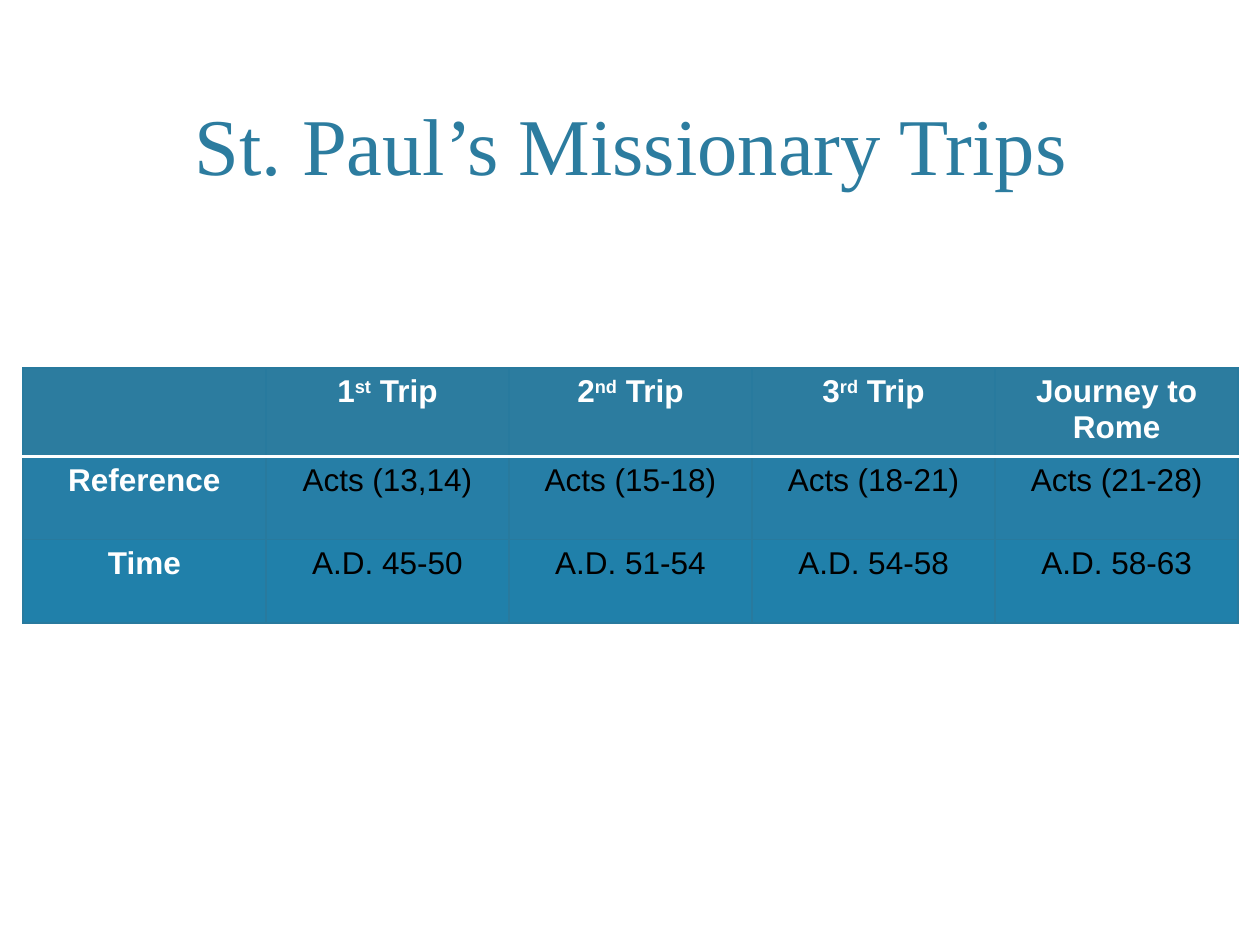
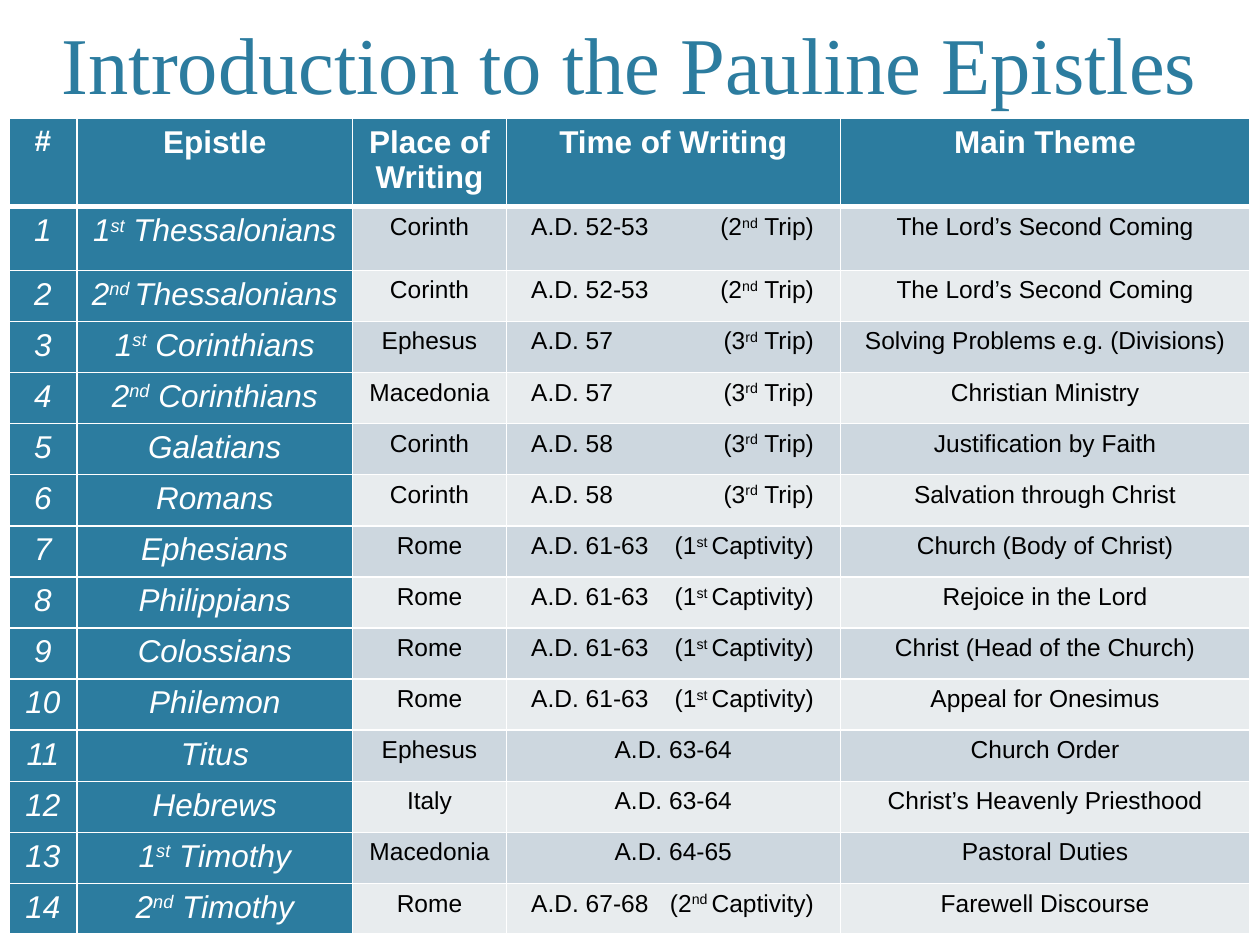
from dataclasses import dataclass, field
from itertools import product

from lxml.etree import SubElement
from pptx import Presentation
from pptx.dml.color import RGBColor
from pptx.enum.text import MSO_ANCHOR, PP_ALIGN
from pptx.oxml.ns import qn
from pptx.slide import Slide
from pptx.table import Table, _Cell
from pptx.text.text import _Paragraph
from pptx.util import Cm, Pt


@dataclass(frozen=True)
class Theme:
    teal: str = "2C7C9F"
    teal_mid: str = "267EA6"
    teal_deep: str = "2080AA"
    teal_line: str = "287A9E"
    band_dark: str = "CDD7DF"
    band_light: str = "E8ECEE"
    white: str = "FFFFFF"
    black: str = "000000"
    title_font: str = "Times New Roman"
    body_font: str = "Arial"
    title_size: float = 46
    large: float = 18
    number_sign: float = 17
    small: float = 14
    plain_table: str = "{2D5ABB26-0587-4C30-8999-92F81FD0307C}"


THEME = Theme()


@dataclass(frozen=True)
class TextStyle:
    size: float
    color: str
    font: str = THEME.body_font
    bold: bool = False
    italic: bool = False


@dataclass(frozen=True)
class Frame:
    left: float
    top: float
    width: float
    height: float


@dataclass(frozen=True)
class Grid:
    left: float
    top: float
    columns: list[float]
    rows: list[float]
    line_color: str
    header_line: float
    texts: list[tuple[str, ...]] = field(default_factory=list)


TITLE = TextStyle(THEME.title_size, THEME.teal, THEME.title_font)
HEADER = TextStyle(THEME.large, THEME.white, bold=True)
NUMBER_SIGN = TextStyle(THEME.number_sign, THEME.white, bold=True)
TRIP_DETAIL = TextStyle(THEME.large, THEME.black)
EPISTLE = TextStyle(THEME.large, THEME.white, italic=True)
EPISTLE_DETAIL = TextStyle(THEME.small, THEME.black)

TRIPS = Grid(0.46, 7.42, [4.9] * 5, [1.68] * 3, THEME.teal_line, 2, [
    ("", "1^st^ Trip", "2^nd^ Trip", "3^rd^ Trip", "Journey to Rome"),
    ("Reference", "Acts (13,14)", "Acts (15-18)", "Acts (18-21)", "Acts (21-28)"),
    ("Time", "A.D. 45-50", "A.D. 51-54", "A.D. 54-58", "A.D. 58-63"),
])

SECOND_TRIP = "\t(2^nd^ Trip)"
THIRD_TRIP = "\t(3^rd^ Trip)"
FIRST_CAPTIVITY = "A.D. 61-63\t(1^st ^Captivity)"

LETTERS = [
    ("1^st^ Thessalonians", "Corinth", "A.D. 52-53" + SECOND_TRIP, "The Lord’s Second Coming"),
    ("2^nd ^Thessalonians", "Corinth", "A.D. 52-53" + SECOND_TRIP, "The Lord’s Second Coming"),
    ("1^st^ Corinthians", "Ephesus", "A.D. 57" + THIRD_TRIP, "Solving Problems e.g. (Divisions)"),
    ("2^nd^ Corinthians", "Macedonia", "A.D. 57" + THIRD_TRIP, "Christian Ministry"),
    ("Galatians", "Corinth", "A.D. 58" + THIRD_TRIP, "Justification by Faith"),
    ("Romans", "Corinth", "A.D. 58" + THIRD_TRIP, "Salvation through Christ"),
    ("Ephesians", "Rome", FIRST_CAPTIVITY, "Church (Body of Christ)"),
    ("Philippians", "Rome", FIRST_CAPTIVITY, "Rejoice in the Lord"),
    ("Colossians", "Rome", FIRST_CAPTIVITY, "Christ (Head of the Church)"),
    ("Philemon", "Rome", FIRST_CAPTIVITY, "Appeal for Onesimus"),
    ("Titus", "Ephesus", "A.D. 63-64", "Church Order"),
    ("Hebrews", "Italy", "A.D. 63-64", "Christ’s Heavenly Priesthood"),
    ("1^st^ Timothy", "Macedonia", "A.D. 64-65", "Pastoral Duties"),
    ("2^nd^ Timothy", "Rome", "A.D. 67-68\t(2^nd ^Captivity)", "Farewell Discourse"),
]

EPISTLES = Grid(
    0.18, 2.39, [1.37, 5.56, 3.1, 6.73, 8.26], [1.65, 1.28] + [1.03] * 12 + [0.94],
    THEME.white, 3,
    [("#", "Epistle", "Place of Writing", "Time of Writing", "Main Theme")]
    + [(str(number), *letter) for number, letter in enumerate(LETTERS, 1)],
)


def write(para: _Paragraph, text: str, style: TextStyle) -> None:
    para.alignment = PP_ALIGN.CENTER
    font = para.font
    font.name, font.size = style.font, Pt(style.size)
    font.bold, font.italic = style.bold, style.italic
    font.color.rgb = RGBColor.from_string(style.color)
    for index, piece in enumerate(text.split("^")):
        if piece:
            span = para.add_run()
            span.text = piece
            if index % 2:
                span.font._element.set("baseline", "30000")


def add_title(page: Slide, text: str, frame: Frame) -> None:
    box = page.shapes.add_textbox(
        Cm(frame.left), Cm(frame.top), Cm(frame.width), Cm(frame.height))
    box.text_frame.word_wrap = True
    box.text_frame.vertical_anchor = MSO_ANCHOR.BOTTOM
    write(box.text_frame.paragraphs[0], text, TITLE)


def spread_on_tab(cell: _Cell) -> None:
    cell.margin_left = Cm(0.5)
    para = cell.text_frame.paragraphs[0]
    para.alignment = PP_ALIGN.LEFT
    properties = para._p.get_or_add_pPr()
    stops = properties.makeelement(qn("a:tabLst"))
    properties.find(qn("a:defRPr")).addprevious(stops)
    SubElement(stops, qn("a:tab"), pos=str(Cm(5.7)), algn="r")


def set_border(cell: _Cell, side: str, color: str, width: float) -> None:
    properties = cell._tc.get_or_add_tcPr()
    line = properties.makeelement(qn(f"a:ln{side}"), {"w": str(Pt(width))})
    fill = SubElement(line, qn("a:solidFill"))
    SubElement(fill, qn("a:srgbClr"), val=color)
    properties.append(line)


def add_grid(page: Slide, grid: Grid) -> Table:
    table = page.shapes.add_table(
        len(grid.rows), len(grid.columns), Cm(grid.left), Cm(grid.top),
        Cm(sum(grid.columns)), Cm(sum(grid.rows))).table
    table.horz_banding = False
    table._tbl.tblPr.find(qn("a:tableStyleId")).text = THEME.plain_table
    for column, width in zip(table.columns, grid.columns):
        column.width = Cm(width)
    for row, height in zip(table.rows, grid.rows):
        row.height = Cm(height)
    for row, column in product(range(len(grid.rows)), range(len(grid.columns))):
        for side in "LRTB":
            under_header = (row, side) in ((0, "B"), (1, "T"))
            color = THEME.white if under_header else grid.line_color
            width = grid.header_line if under_header else 1
            set_border(table.cell(row, column), side, color, width)
    return table


def fill_cell(cell: _Cell, text: str, style: TextStyle, color: str) -> None:
    cell.fill.solid()
    cell.fill.fore_color.rgb = RGBColor.from_string(color)
    write(cell.text_frame.paragraphs[0], text, style)


def build_trips(page: Slide) -> None:
    add_title(page, "St. Paul’s Missionary Trips", Frame(1.55, 0.28, 22.33, 3.71))
    table = add_grid(page, TRIPS)
    fills = (THEME.teal, THEME.teal_mid, THEME.teal_deep)
    for row, texts in enumerate(TRIPS.texts):
        for column, text in enumerate(texts):
            style = TRIP_DETAIL if row and column else HEADER
            fill_cell(table.cell(row, column), text, style, fills[row])


def build_epistles(page: Slide) -> None:
    add_title(page, "Introduction to the Pauline Epistles", Frame(0.99, 0.33, 23.39, 2.03))
    table = add_grid(page, EPISTLES)
    for row, texts in enumerate(EPISTLES.texts):
        for column, text in enumerate(texts):
            cell = table.cell(row, column)
            if row == 0:
                style = HEADER if column else NUMBER_SIGN
                fill_cell(cell, text, style, THEME.teal)
            elif column < 2:
                fill_cell(cell, text, EPISTLE, THEME.teal)
            else:
                band = THEME.band_dark if row % 2 else THEME.band_light
                fill_cell(cell, text, EPISTLE_DETAIL, band)
            if "\t" in text:
                spread_on_tab(cell)


def main() -> None:
    deck = Presentation()
    deck.slide_width, deck.slide_height = Cm(25.4), Cm(19.05)
    blank = deck.slide_layouts[6]
    for build in (build_trips, build_epistles):
        build(deck.slides.add_slide(blank))
    deck.save("out.pptx")


if __name__ == "__main__":
    main()
